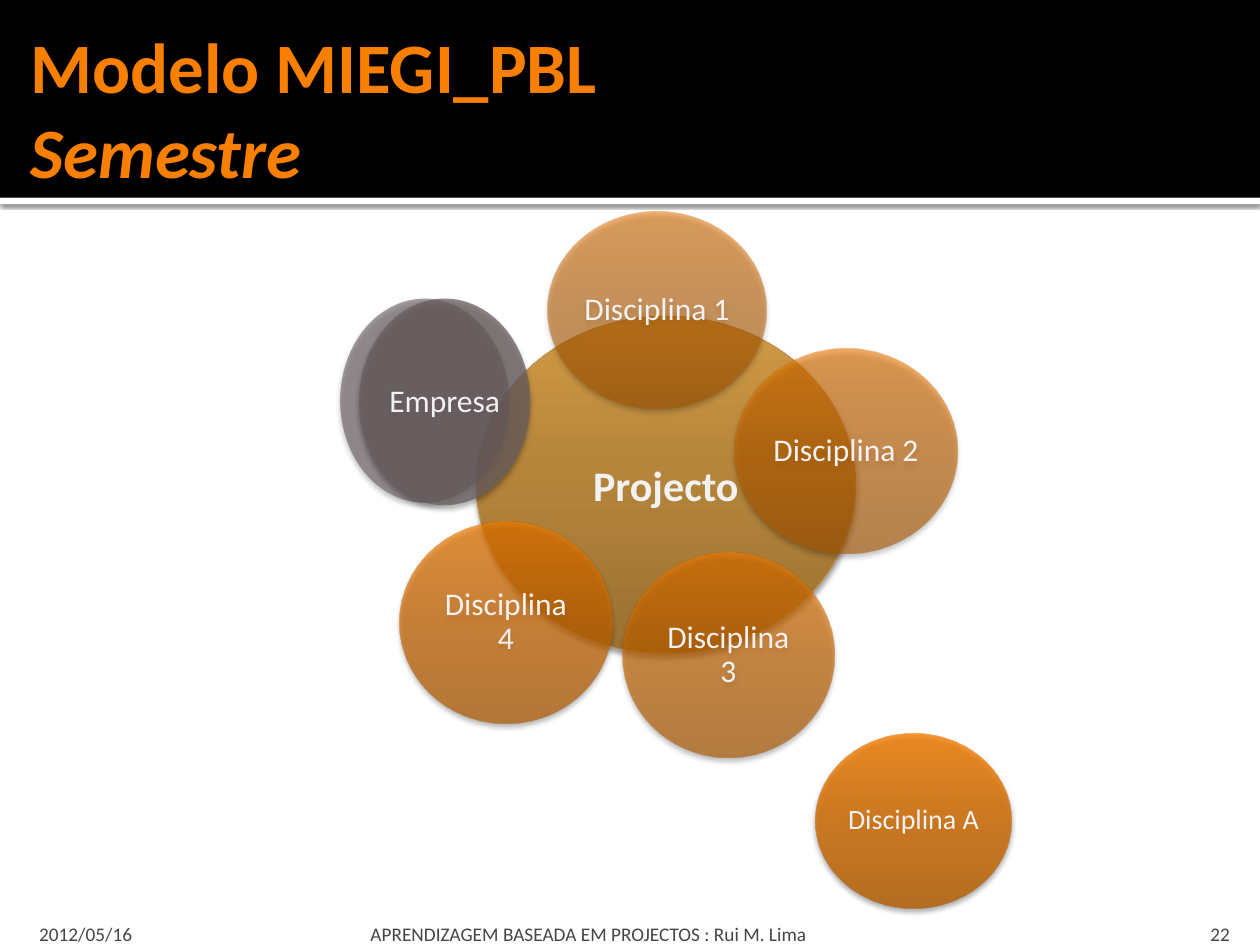
from lxml import etree
from pptx import Presentation
from pptx.dml.color import RGBColor
from pptx.enum import shapes, text
from pptx.oxml import ns
from pptx.util import Inches, Pt

FONT = "Calibri"
ORANGE, LIGHT, GREY = "F97F00", "F2F2F2", "454545"
LEFT, CENTER, RIGHT = (text.PP_ALIGN.LEFT, text.PP_ALIGN.CENTER, text.PP_ALIGN.RIGHT)
SOFT = ("000000", 38, 3.1, 2, 90)


def add_run(p, words, size, colour, bold=False, italic=False):
    r = p.add_run()
    r.text = words
    r.font.name, r.font.size = FONT, Pt(size)
    r.font.bold, r.font.italic = bold, italic
    r.font.color.rgb = RGBColor.from_string(colour)


def add_filled(kind, box, stops, alpha=100, shadow=None):
    """Add a borderless shape; one colour fills it plain, several fade upwards."""
    sp = s.shapes.add_shape(kind, *map(Inches, box))
    sp.line.fill.background()
    sp.shadow.inherit = False
    spPr = sp._element.spPr
    if len(stops) == 1:
        sp.fill.solid()
        sp.fill.fore_color.rgb = RGBColor.from_string(stops[0])
    else:
        sp.fill.gradient()
        sp.fill.gradient_angle = 90
        gs_list = spPr.find(".//" + ns.qn("a:gsLst"))
        for gs in list(gs_list):
            gs_list.remove(gs)
        for pos, colour in zip((0, 55, 100), stops):
            gs = etree.SubElement(gs_list, ns.qn("a:gs"), pos=str(pos * 1000))
            etree.SubElement(gs, ns.qn("a:srgbClr"), val=colour)
    if alpha < 100:
        for clr in spPr.iter(ns.qn("a:srgbClr")):
            etree.SubElement(clr, ns.qn("a:alpha"), val=str(alpha * 1000))
    if shadow:
        colour, opacity, blur, dist, angle = shadow
        outer = etree.SubElement(
            spPr.find(ns.qn("a:effectLst")), ns.qn("a:outerShdw"),
            blurRad=str(Pt(blur)), dist=str(Pt(dist)), dir=str(angle * 60000),
            algn="ctr", rotWithShape="0")
        clr = etree.SubElement(outer, ns.qn("a:srgbClr"), val=colour)
        etree.SubElement(clr, ns.qn("a:alpha"), val=str(opacity * 1000))
    return sp


prs = Presentation()
prs.slide_width, prs.slide_height = Inches(10), Inches(7.5)
s = prs.slides.add_slide(prs.slide_layouts[5])

# Header band and title
RECT, OVAL = shapes.MSO_SHAPE.RECTANGLE, shapes.MSO_SHAPE.OVAL
add_filled(RECT, (0, 1.57, 10, 0.05), ["FFFFFF"], shadow=("000000", 60, 2.5, 0.8, 90))
add_filled(RECT, (0, 0, 10, 1.57), ["000000"])

title = s.shapes.title
s.shapes._spTree.append(title._element)  # in front of the band
title.left, title.top = Inches(0.14), Inches(0.17)
title.width, title.height = Inches(9.72), Inches(1.37)
tf = title.text_frame
tf.auto_size = text.MSO_AUTO_SIZE.NONE
tf.vertical_anchor = text.MSO_ANCHOR.MIDDLE
tf.margin_left = Inches(0.1)
tf.margin_top = tf.margin_right = tf.margin_bottom = Inches(0.05)
p = tf.paragraphs[0]
p.alignment = LEFT
add_run(p, "Modelo MIEGI_PBL", 40.5, ORANGE, bold=True)
p.add_line_break()
add_run(p, "Semestre", 40.5, ORANGE, bold=True, italic=True)

# Project circle, subjects around it, and the company disc (rear edge, then face)
circles = [
    ("Projecto", (3.78, 2.51, 3.01, 2.68), ["9A7132", "B5853B", "D29B45"], 100, 24),
    ("Disciplina 1", (4.35, 1.68, 1.73, 1.56), ["A65500", "C46400", "E47500"], 55, 18),
    ("Disciplina 2", (5.83, 2.77, 1.77, 1.62), ["A95700", "C76600", "E87700"], 60, 18),
    ("Disciplina 3", (4.94, 4.39, 1.68, 1.62), ["AC5800", "CB6800", "EC7900"], 65, 18),
    ("Disciplina 4", (3.17, 4.14, 1.69, 1.6), ["AF5A00", "CE6900", "F07B00"], 70, 18),
    ("", (2.7, 2.37, 1.34, 1.62), ["6A5E60"], 60, 18),
    ("Empresa", (2.85, 2.37, 1.36, 1.64), ["6A5E60"], 75, 18),
    ("Disciplina A", (6.47, 5.82, 1.56, 1.39), ["B55D00", "D56D00", "F87F00"], 80, 16),
]
for name, box, stops, alpha, size in circles:
    sp = add_filled(OVAL, box, stops, alpha, SOFT)
    if not name:
        continue
    tf = sp.text_frame
    tf.word_wrap = True
    tf.vertical_anchor = text.MSO_ANCHOR.MIDDLE
    tf.margin_left = tf.margin_top = tf.margin_right = tf.margin_bottom = Inches(0.03)
    p = tf.paragraphs[0]
    p.alignment = CENTER
    is_hub = name == "Projecto"
    if is_hub:
        sp.line.color.rgb = RGBColor.from_string("BF9554")
        sp.line.width = Pt(0.5)
    else:
        p.line_spacing = 0.9
    add_run(p, name, size, LIGHT, bold=is_hub)

# Footer
footer = [
    ("2012/05/16", 0.19, 2.65, 0.12, 0.05, LEFT),
    ("APRENDIZAGEM BASEADA EM PROJECTOS : Rui M. Lima", 2.89, 6.02, 0.05, 0.05, LEFT),
    ("22", 8.97, 0.89, 0.1, 0.1, RIGHT),
]
for words, left, width, inset_left, inset_right, align in footer:
    tf = s.shapes.add_textbox(*map(Inches, (left, 7.08, width, 0.42))).text_frame
    tf.word_wrap = True
    tf.vertical_anchor = text.MSO_ANCHOR.BOTTOM
    tf.margin_left, tf.margin_right = Inches(inset_left), Inches(inset_right)
    tf.margin_top, tf.margin_bottom = Inches(0.05), 0
    p = tf.paragraphs[0]
    p.alignment = align
    add_run(p, words, 11, GREY)

prs.save("out.pptx")
